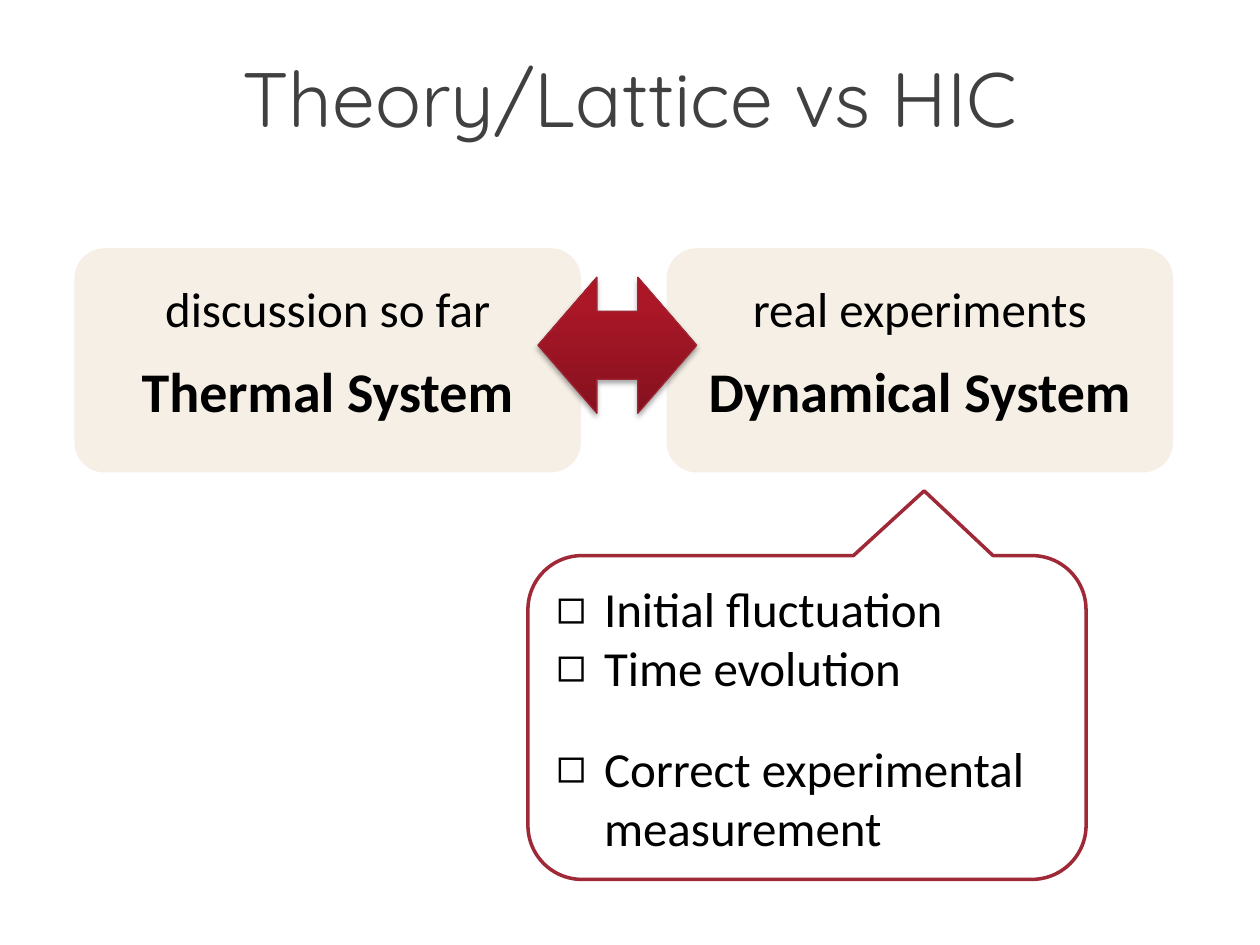
import pptx
import pptx.util
import pptx.dml.color
import pptx.enum.shapes
import pptx.enum.text
import pptx.oxml
import pptx.oxml.ns
import copy
from lxml import etree

Inches = pptx.util.Inches
Pt = pptx.util.Pt
SHAPE = pptx.enum.shapes.MSO_SHAPE
ALIGN = pptx.enum.text.PP_ALIGN
ANCHOR = pptx.enum.text.MSO_ANCHOR
qn = pptx.oxml.ns.qn

COLORS = {
    "title": "404040",
    "text": "000000",
    "card": "C19859",
    "callout": "FFFFFF",
    "callout_line": "9F2936",
    "arrow_line": "9E2533",
    "arrow_dark": "84111E",
    "arrow_mid": "AB1727",
    "arrow_light": "AF1425",
    "shadow": "000000",
}
CARD_WIDTH = 4.02


def rgb(name):
    return pptx.dml.color.RGBColor.from_string(COLORS[name])


def style_font(para, name, size, color, bold=False):
    para.font.name = name
    para.font.size = Pt(size)
    para.font.bold = bold
    para.font.color.rgb = rgb(color)


def add_title(page, text):
    title = page.shapes.title
    title.left, title.top = Inches(0.5), Inches(0.14)
    title.width, title.height = Inches(9), Inches(1.25)
    frame = title.text_frame
    frame.text = text
    frame.word_wrap = False
    frame.vertical_anchor = ANCHOR.MIDDLE
    para = frame.paragraphs[0]
    para.alignment = ALIGN.CENTER
    style_font(para, "Quicksand", 44, "title")


def add_box(page, kind, left, top, width, height, adjustments):
    box = page.shapes.add_shape(
        kind, Inches(left), Inches(top), Inches(width), Inches(height)
    )
    box.shadow.inherit = False
    for index, value in enumerate(adjustments):
        box.adjustments[index] = value
    return box


def add_card(page, left):
    card = add_box(page, SHAPE.ROUNDED_RECTANGLE, left, 1.97, CARD_WIDTH, 1.78, [0.135])
    card.fill.solid()
    card.fill.fore_color.rgb = rgb("card")
    card.line.fill.background()
    color = card._element.spPr.find(qn("a:solidFill")).find(qn("a:srgbClr"))
    etree.SubElement(color, qn("a:alpha"), val="15000")


def add_label(page, text, center, top, width, height, size, bold=False):
    box = page.shapes.add_textbox(
        Inches(center - width / 2), Inches(top), Inches(width), Inches(height)
    )
    box.text_frame.word_wrap = False
    box.text_frame.text = text
    para = box.text_frame.paragraphs[0]
    para.alignment = ALIGN.CENTER
    style_font(para, "Calibri", size, "text", bold)


def add_bullet(para, symbol):
    properties = para._p.get_or_add_pPr()
    properties.set("marL", str(Inches(0.38)))
    properties.set("indent", str(-Inches(0.38)))
    etree.SubElement(properties, qn("a:buFont"), typeface="Arial")
    etree.SubElement(properties, qn("a:buChar"), char=symbol)


def add_callout(page, items):
    callout = add_box(
        page, SHAPE.ROUNDED_RECTANGULAR_CALLOUT, 4.19, 4.41, 4.43, 2.57, [0.21, -0.7, 0.167]
    )
    callout.fill.solid()
    callout.fill.fore_color.rgb = rgb("callout")
    callout.line.color.rgb = rgb("callout_line")
    callout.line.width = Pt(2)
    frame = callout.text_frame
    frame.word_wrap = True
    frame.vertical_anchor = ANCHOR.MIDDLE
    for index, (text, space) in enumerate(items):
        para = frame.paragraphs[0] if index == 0 else frame.add_paragraph()
        para.text = text
        para.alignment = ALIGN.LEFT
        para.space_before = Pt(space)
        add_bullet(para, "◻")
        style_font(para, "Calibri", 28, "text")


def add_arrow(page):
    arrow = add_box(page, SHAPE.LEFT_RIGHT_ARROW, 4.27, 2.2, 1.26, 1.08, [0.5, 0.433])
    arrow.line.color.rgb = rgb("arrow_line")
    arrow.line.width = Pt(0.75)
    arrow.fill.gradient()
    arrow.fill.gradient_angle = 90
    properties = arrow._element.spPr
    stop_list = properties.find(qn("a:gradFill")).find(qn("a:gsLst"))
    stop_list.insert(1, copy.deepcopy(stop_list[0]))
    stops = [(0, "arrow_dark"), (0.8, "arrow_mid"), (1, "arrow_light")]
    for stop, (position, color) in zip(arrow.fill.gradient_stops, stops):
        stop.position = position
        stop.color.rgb = rgb(color)
    shadow = etree.SubElement(
        properties.find(qn("a:effectLst")),
        qn("a:outerShdw"),
        blurRad=str(Pt(3.1)),
        dist=str(Pt(1.8)),
        dir="5400000",
        rotWithShape="0",
    )
    color = etree.SubElement(shadow, qn("a:srgbClr"), val=COLORS["shadow"])
    etree.SubElement(color, qn("a:alpha"), val="35000")


def main():
    deck = pptx.Presentation()
    deck.slide_width, deck.slide_height = Inches(10), Inches(7.5)
    page = deck.slides.add_slide(deck.slide_layouts[5])
    add_title(page, "Theory/Lattice vs HIC")
    systems = [
        (0.59, "discussion so far", 2.81, "Thermal System", 3.18),
        (5.29, "real experiments", 2.88, "Dynamical System", 3.58),
    ]
    for left, caption, caption_width, name, name_width in systems:
        center = left + CARD_WIDTH / 2
        add_card(page, left)
        add_label(page, caption, center, 2.16, caption_width, 0.57, 28)
        add_label(page, name, center, 2.78, name_width, 0.64, 32, True)
    add_callout(
        page,
        [
            ("Initial fluctuation", 0),
            ("Time evolution", 0),
            ("Correct experimental measurement", 24),
        ],
    )
    add_arrow(page)
    deck.save("out.pptx")


if __name__ == "__main__":
    main()
